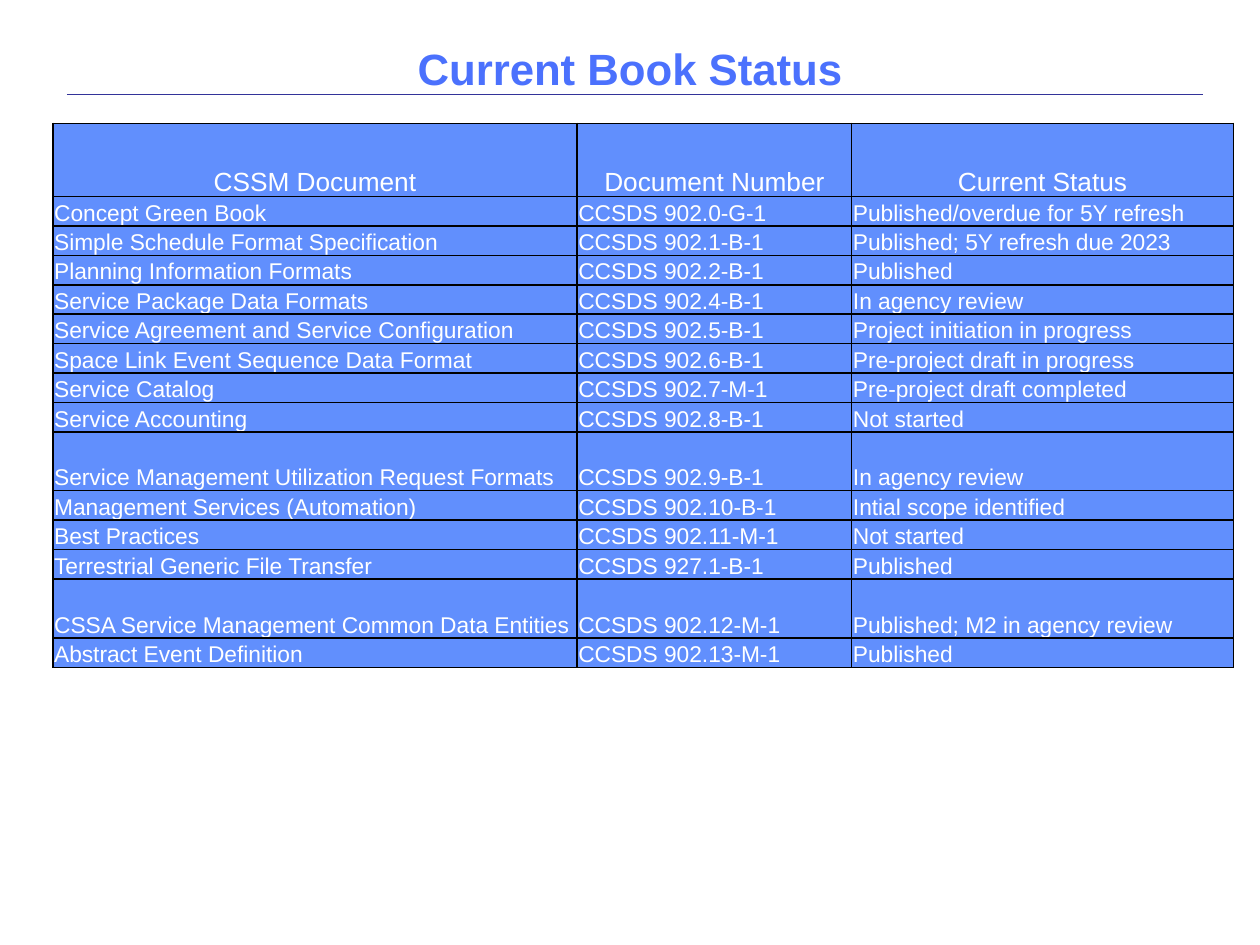
from pptx import Presentation
from pptx.dml.color import RGBColor
from pptx.enum.shapes import MSO_CONNECTOR
from pptx.enum.text import MSO_ANCHOR, PP_ALIGN
from pptx.oxml.ns import qn
from pptx.util import Inches, Pt
from lxml.etree import SubElement

FONT = "Arial"
TITLE_BLUE = RGBColor(0x4B, 0x71, 0xFD)
CELL_BLUE = RGBColor(0x61, 0x8F, 0xFD)
RULE_NAVY = RGBColor(0x33, 0x33, 0x99)
WHITE = RGBColor(0xFF, 0xFF, 0xFF)
BLACK = RGBColor(0, 0, 0)

HEADINGS = ("CSSM Document", "Document Number", "Current Status")
BOOKS = (
    ("Concept Green Book", "CCSDS 902.0-G-1", "Published/overdue for 5Y refresh"),
    ("Simple Schedule Format Specification", "CCSDS 902.1-B-1", "Published; 5Y refresh due 2023"),
    ("Planning Information Formats", "CCSDS 902.2-B-1", "Published"),
    ("Service Package Data Formats", "CCSDS 902.4-B-1", "In agency review"),
    ("Service Agreement and Service Configuration", "CCSDS 902.5-B-1", "Project initiation in progress"),
    ("Space Link Event Sequence Data Format", "CCSDS 902.6-B-1", "Pre-project draft in progress"),
    ("Service Catalog", "CCSDS 902.7-M-1", "Pre-project draft completed"),
    ("Service Accounting", "CCSDS 902.8-B-1", "Not started"),
    ("Service Management Utilization Request Formats", "CCSDS 902.9-B-1", "In agency review"),
    ("Management Services (Automation)", "CCSDS 902.10-B-1", "Intial scope identified"),
    ("Best Practices", "CCSDS 902.11-M-1", "Not started"),
    ("Terrestrial Generic File Transfer", "CCSDS 927.1-B-1", "Published"),
    ("CSSA Service Management Common Data Entities", "CCSDS 902.12-M-1", "Published; M2 in agency review"),
    ("Abstract Event Definition", "CCSDS 902.13-M-1", "Published"),
)
DOUBLE_HEIGHT_BOOKS = ("CCSDS 902.9-B-1", "CCSDS 902.12-M-1")
COLUMN_WIDTHS = (4.16, 2.18, 3.03)
TABLE_HEIGHT = 4.32
HEADING_HEIGHT = 0.58


def write_text(frame, text, *, size, color, bold=False, align=PP_ALIGN.LEFT, spacing=None):
    """Write one formatted paragraph into a text frame."""
    para = frame.paragraphs[0]
    para.alignment = align
    para.line_spacing = spacing
    span = para.add_run()
    span.text = text
    span.font.name = FONT
    span.font.size = Pt(size)
    span.font.bold = bold
    span.font.color.rgb = color


def add_title(page, text):
    """Add the centred slide title."""
    box = page.shapes.add_textbox(Inches(0.5), Inches(0.3), Inches(9), Inches(0.55))
    frame = box.text_frame
    frame.word_wrap = True
    frame.margin_top = Inches(0.08)
    write_text(frame, text, size=25, color=TITLE_BLUE, bold=True,
               align=PP_ALIGN.CENTER, spacing=0.9)


def add_rule(page):
    """Add the hairline under the title."""
    rule = page.shapes.add_connector(
        MSO_CONNECTOR.STRAIGHT, Inches(0.53), Inches(0.75), Inches(9.55), Inches(0.75))
    rule.line.color.rgb = RULE_NAVY
    rule.line.width = Pt(0.13)
    SubElement(rule._element.spPr, qn("a:effectLst"))


def add_borders(cell):
    """Draw a thin black line on all four sides of a cell."""
    properties = cell._tc.get_or_add_tcPr()
    for index, side in enumerate(("lnL", "lnR", "lnT", "lnB")):
        line = properties.makeelement(qn(f"a:{side}"), {"w": str(Pt(1))})
        fill = SubElement(line, qn("a:solidFill"))
        SubElement(fill, qn("a:srgbClr"), val=str(BLACK))
        properties.insert(index, line)


def fill_cell(cell, text, **text_format):
    """Fill, border and label one table cell."""
    cell.fill.solid()
    cell.fill.fore_color.rgb = CELL_BLUE
    cell.vertical_anchor = MSO_ANCHOR.BOTTOM
    cell.margin_left = cell.margin_right = cell.margin_top = Inches(0.01)
    cell.margin_bottom = 0
    add_borders(cell)
    write_text(cell.text_frame, text, color=WHITE, **text_format)


def add_status_table(page):
    """Add the table of books with their numbers and status."""
    table = page.shapes.add_table(
        len(BOOKS) + 1, len(HEADINGS), Inches(0.42), Inches(0.98),
        Inches(sum(COLUMN_WIDTHS)), Inches(TABLE_HEIGHT)).table
    for column, width in zip(table.columns, COLUMN_WIDTHS):
        column.width = Inches(width)
    line_count = len(BOOKS) + len(DOUBLE_HEIGHT_BOOKS)
    line_height = (TABLE_HEIGHT - HEADING_HEIGHT) / line_count
    table.rows[0].height = Inches(HEADING_HEIGHT)
    for cell, heading in zip(table.rows[0].cells, HEADINGS):
        fill_cell(cell, heading, size=15, align=PP_ALIGN.CENTER)
    for row, book in zip(list(table.rows)[1:], BOOKS):
        lines = 2 if book[1] in DOUBLE_HEIGHT_BOOKS else 1
        row.height = Inches(lines * line_height)
        for cell, text in zip(row.cells, book):
            fill_cell(cell, text, size=13)


def main():
    """Build and save the deck."""
    deck = Presentation()
    deck.slide_width, deck.slide_height = Inches(10), Inches(7.5)
    page = deck.slides.add_slide(deck.slide_layouts[6])
    add_rule(page)
    add_title(page, "Current Book Status")
    add_status_table(page)
    deck.save("out.pptx")


if __name__ == "__main__":
    main()
